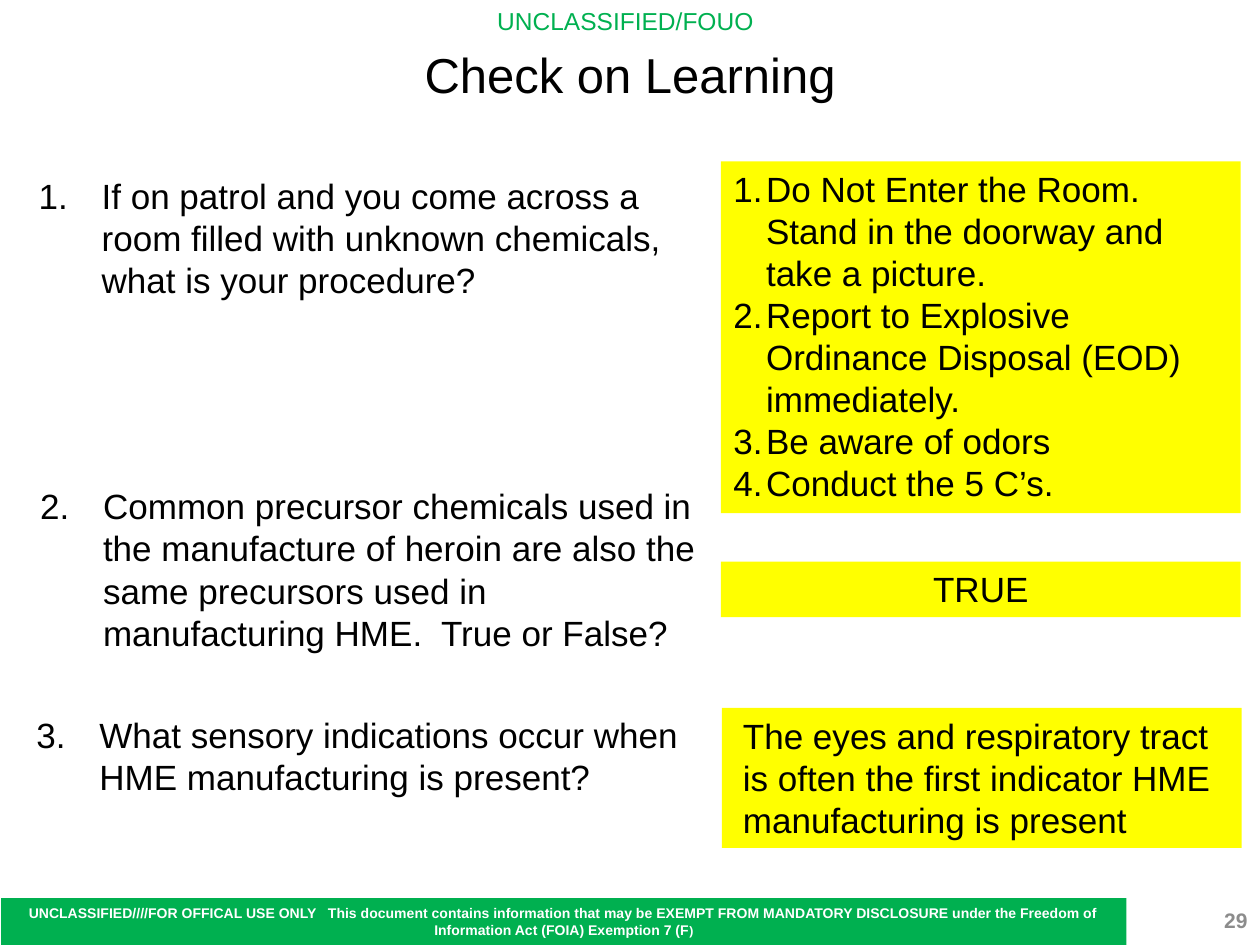
"""Build the "Check on Learning" quiz slide with questions and highlighted answers."""
import pptx
import pptx.dml.color
import pptx.enum.shapes
import pptx.enum.text
import pptx.oxml.ns
import pptx.util
from lxml import etree

Pt = pptx.util.Pt
Align = pptx.enum.text.PP_ALIGN
Anchor = pptx.enum.text.MSO_ANCHOR
AutoSize = pptx.enum.text.MSO_AUTO_SIZE


def color(value):
    return pptx.dml.color.RGBColor.from_string(value)


def number_paragraph(paragraph, start):
    properties = paragraph._p.get_or_add_pPr()
    numbering = etree.SubElement(properties, pptx.oxml.ns.qn("a:buAutoNum"), type="arabicPeriod")
    if start > 1:
        numbering.set("startAt", str(start))


def add_run(paragraph, text, size=20, ink="000000", bold=False):
    run = paragraph.add_run()
    run.text = text
    run.font.name = "Arial"
    run.font.size = Pt(size)
    run.font.bold = bold
    run.font.color.rgb = color(ink)


def write_text(shape, *lines, align=Align.LEFT, anchor=Anchor.TOP, wrap=True, grow=True,
               margin=0, hanging=0, start=None, **font):
    frame = shape.text_frame
    frame.word_wrap = wrap
    frame.vertical_anchor = anchor
    frame.auto_size = AutoSize.SHAPE_TO_FIT_TEXT if grow else AutoSize.NONE
    for index, line in enumerate(lines):
        paragraph = frame.add_paragraph() if index else frame.paragraphs[0]
        paragraph.alignment = align
        properties = paragraph._p.get_or_add_pPr()
        properties.set("marL", str(Pt(margin + hanging)))
        properties.set("indent", str(-Pt(hanging)))
        if start:
            number_paragraph(paragraph, start)
        add_run(paragraph, line, **font)


class QuizSlide:
    def __init__(self, presentation):
        self.green = "00B050"
        self.yellow = "FFFF00"
        self.slide = presentation.slides.add_slide(presentation.slide_layouts[5])

    def title(self, text):
        shape = self.slide.shapes.title
        shape.left, shape.top, shape.width, shape.height = Pt(0), Pt(21.6), Pt(720), Pt(41)
        write_text(shape, text, align=Align.CENTER, size=28)

    def label(self, box, *lines, **style):
        shape = self.slide.shapes.add_textbox(*map(Pt, box))
        write_text(shape, *lines, **style)

    def block(self, box, fill, *lines, **style):
        shape = self.slide.shapes.add_shape(
            pptx.enum.shapes.MSO_SHAPE.RECTANGLE, *map(Pt, box))
        shape.shadow.inherit = False
        shape.fill.solid()
        shape.fill.fore_color.rgb = color(fill)
        shape.line.fill.background()
        write_text(shape, *lines, **style)
        return shape

    def question(self, number, left, top, height, text):
        self.label((left, top, 400, height), text, hanging=36, start=number)

    def answer(self, left, top, height, *lines, **style):
        self.block((left, top, 297, height), self.yellow, *lines, **style)

    def markings(self, page):
        self.label((277, 0, 165, 24.5), "UNCLASSIFIED/FOUO", wrap=False, size=14, ink=self.green)
        footer = self.block(
            (0.7, 513.2, 643, 26.8), self.green,
            "UNCLASSIFIED////FOR OFFICAL USE ONLY   This document contains information that may be "
            "EXEMPT FROM MANDATORY DISCLOSURE under the Freedom of Information Act (FOIA) "
            "Exemption 7 (F",
            align=Align.CENTER, size=8, ink="FFFFFF", bold=True)
        add_run(footer.text_frame.paragraphs[0], ")", size=7, ink="FFFFFF", bold=True)
        self.label((655, 511, 65, 29), page, align=Align.RIGHT, anchor=Anchor.MIDDLE,
                   grow=False, size=12, ink="8C8C8C", bold=True)


def main():
    presentation = pptx.Presentation()
    presentation.slide_width, presentation.slide_height = Pt(720), Pt(540)
    quiz = QuizSlide(presentation)
    quiz.markings("29")
    quiz.title("Check on Learning")
    quiz.question(1, 15, 96, 104, "If on patrol and you come across a room filled with unknown "
                  "chemicals, what is your procedure?")
    quiz.question(2, 15.8, 273.6, 128, "Common precursor chemicals used in the manufacture of heroin "
                  "are also the same precursors used in manufacturing HME.  True or False?")
    quiz.question(3, 13.7, 404, 55.5, "What sensory indications occur when HME manufacturing is present?")
    quiz.answer(412, 92.2, 201, "Do Not Enter the Room. Stand in the doorway and take a picture.",
                "Report to Explosive Ordinance Disposal (EOD) immediately.",
                "Be aware of odors", "Conduct the 5 C’s.", hanging=18.7, start=1)
    quiz.answer(412, 321, 31.7, "TRUE", align=Align.CENTER)
    quiz.answer(412.5, 404.6, 80, "The eyes and respiratory tract is often the first indicator "
                "HME manufacturing is present", margin=5)
    presentation.save("out.pptx")


if __name__ == "__main__":
    main()
